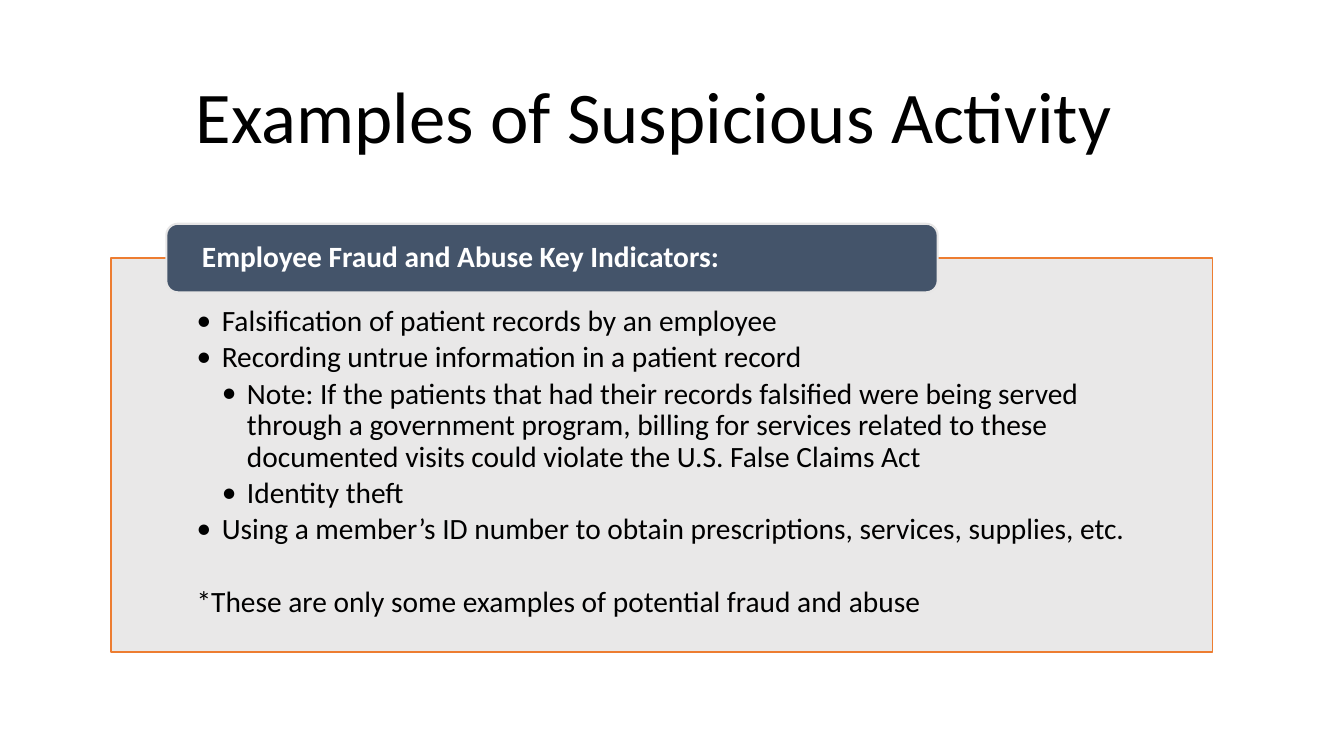
from dataclasses import dataclass

from lxml.etree import SubElement
from pptx import Presentation
from pptx.dml.color import RGBColor
from pptx.enum.shapes import MSO_SHAPE
from pptx.enum.text import MSO_ANCHOR, PP_ALIGN
from pptx.oxml.ns import qn
from pptx.util import Emu, Inches, Pt

COLUMN = Inches(0.55)
ROW = Inches(0.34)
INDENT = Inches(0.25)
FONT = "Calibri"
BODY_SIZE = 21
LINE_SPACING = 0.9


@dataclass(frozen=True)
class Area:
    """A place on the slide, in grid columns and rows."""
    column: float
    row: float
    columns: float
    rows: float

    def place(self, shape) -> None:
        """Move and size a shape to this area."""
        shape.left, shape.top = Emu(round(self.column * COLUMN)), Emu(round(self.row * ROW))
        shape.width, shape.height = Emu(round(self.columns * COLUMN)), Emu(round(self.rows * ROW))


@dataclass(frozen=True)
class Panel:
    """A filled and outlined shape that holds text."""
    kind: MSO_SHAPE
    area: Area
    fill: str
    line: str
    line_width: float
    margins: tuple[float, float, float, float]
    anchor: MSO_ANCHOR
    opacity: int = 100


@dataclass(frozen=True)
class Item:
    """A line of the list; level 0 has no bullet."""
    text: str
    level: int = 1
    space_before: float = 0


TITLE_AREA = Area(2, 1.71, 19.87, 3.59)
BODY = Panel(MSO_SHAPE.RECTANGLE, Area(2, 7.53, 19.87, 11.5), "E7E6E6", "ED7D31", 1,
             (0.85, 0.48, 0.85, 0.16), MSO_ANCHOR.TOP, 90)
HEADING = Panel(MSO_SHAPE.ROUNDED_RECTANGLE, Area(3, 6.53, 13.91, 2), "44546A", "E7E6E6", 1.5,
                (0.32, 0, 0.32, 0), MSO_ANCHOR.MIDDLE)
INDICATORS = [
    Item("Falsification of patient records by an employee"),
    Item("Recording untrue information in a patient record"),
    Item("Note: If the patients that had their records falsified were being served through a "
         "government program, billing for services related to these documented visits could "
         "violate the U.S. False Claims Act", 2),
    Item("Identity theft", 2),
    Item("Using a member’s ID number to obtain prescriptions, services, supplies, etc."),
    Item("*These are only some examples of potential fraud and abuse", 0, 26.2),
]


def color(value: str) -> RGBColor:
    """Turn a hex string into a colour."""
    return RGBColor.from_string(value)


def format_para(para, size: float, ink: str, align: PP_ALIGN, bold: bool = False) -> None:
    """Set the alignment, line spacing and font of a paragraph."""
    para.alignment = align
    para.line_spacing = LINE_SPACING
    for span in para.runs:
        span.font.name = FONT
        span.font.size = Pt(size)
        span.font.bold = bold
        span.font.color.rgb = color(ink)


def add_bullet(para, level: int) -> None:
    """Give a paragraph a hanging bullet at its level."""
    para.level = level
    properties = para._p.get_or_add_pPr()
    properties.set("marL", str(level * INDENT))
    properties.set("indent", str(-INDENT))
    SubElement(properties, qn("a:buFont"), typeface=FONT)
    SubElement(properties, qn("a:buChar"), char="•")


def add_panel(slide, panel: Panel):
    """Draw a panel and return its text frame."""
    box = slide.shapes.add_shape(panel.kind, 0, 0, 0, 0)
    panel.area.place(box)
    box.shadow.inherit = False
    box.fill.solid()
    box.fill.fore_color.rgb = color(panel.fill)
    if panel.opacity < 100:
        shade = box._element.spPr.find(qn("a:solidFill")).find(qn("a:srgbClr"))
        SubElement(shade, qn("a:alpha"), val=str(panel.opacity * 1000))
    box.line.color.rgb = color(panel.line)
    box.line.width = Pt(panel.line_width)
    frame = box.text_frame
    frame.word_wrap = True
    frame.vertical_anchor = panel.anchor
    (frame.margin_left, frame.margin_top,
     frame.margin_right, frame.margin_bottom) = map(Inches, panel.margins)
    return frame


def add_title(slide, text: str) -> None:
    """Fill and place the title placeholder."""
    title = slide.shapes.title
    TITLE_AREA.place(title)
    title.text_frame.text = text
    title.text_frame.vertical_anchor = MSO_ANCHOR.MIDDLE
    format_para(title.text_frame.paragraphs[0], 52, "000000", PP_ALIGN.CENTER)


def add_indicators(slide, items: list[Item]) -> None:
    """Draw the body panel with its list."""
    frame = add_panel(slide, BODY)
    frame.text = "\n".join(item.text for item in items)
    for para, item in zip(frame.paragraphs, items):
        format_para(para, BODY_SIZE, "000000", PP_ALIGN.LEFT)
        para.space_before = Pt(item.space_before)
        para.space_after = Pt(0.15 * BODY_SIZE)
        if item.level:
            add_bullet(para, item.level)


def add_heading(slide, text: str) -> None:
    """Draw the tab that heads the list."""
    frame = add_panel(slide, HEADING)
    frame.text = text
    format_para(frame.paragraphs[0], BODY_SIZE, "FFFFFF", PP_ALIGN.LEFT, bold=True)


def main() -> None:
    """Build and save the slide."""
    deck = Presentation()
    deck.slide_width, deck.slide_height = Inches(13.33), Inches(7.5)
    slide = deck.slides.add_slide(deck.slide_layouts.get_by_name("Title Only"))
    add_title(slide, "Examples of Suspicious Activity ")
    add_indicators(slide, INDICATORS)
    add_heading(slide, "Employee Fraud and Abuse Key Indicators:")
    deck.save("out.pptx")


if __name__ == "__main__":
    main()
